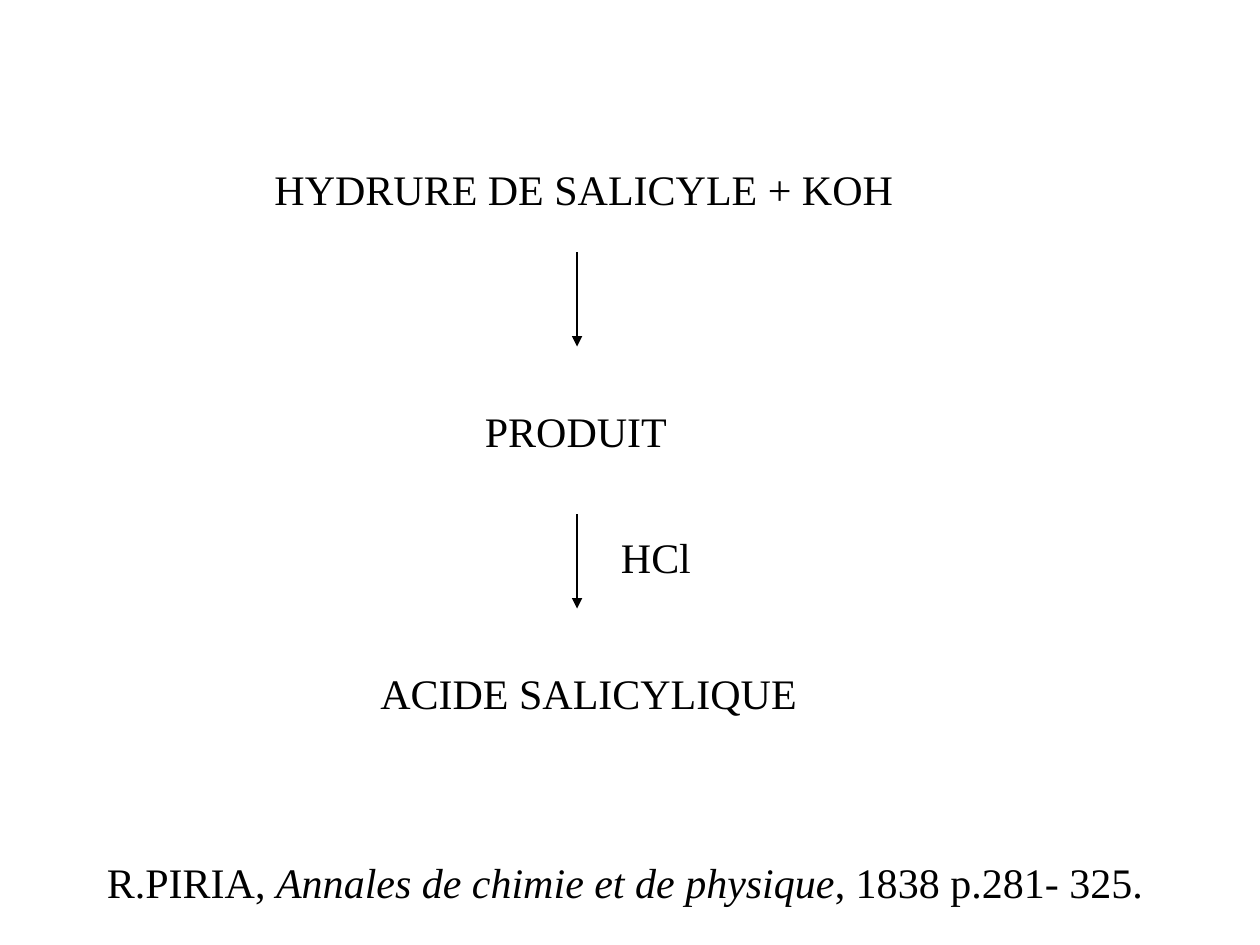
from dataclasses import dataclass

import pptx
import pptx.dml.color
import pptx.enum.shapes
import pptx.enum.text
import pptx.oxml.ns
import pptx.slide
import pptx.util
from lxml import etree
from pptx.util import Inches

BLACK = pptx.dml.color.RGBColor(0, 0, 0)
FONT = "Times New Roman"
FONT_SIZE = pptx.util.Pt(24)
LABEL_HEIGHT = 0.5
ARROW_X = 4.58
ARROW_LENGTH = 0.75
ARROW_TOPS = (2, 4.08)


@dataclass(frozen=True)
class Label:
    left: float
    top: float
    width: float
    texts: tuple[str, ...]
    italic_index: int | None = None


LABELS = (
    Label(2.08, 1.25, 5.11, ("HYDRURE DE SALICYLE + KOH",)),
    Label(3.75, 3.17, 1.65, ("PRODUIT",)),
    Label(4.83, 4.17, 0.76, ("HCl",)),
    Label(2.92, 5.25, 3.51, ("ACIDE SALICYLIQUE",)),
    Label(0.75, 6.75, 8.42,
          ("R.PIRIA, ", "Annales de chimie et de physique", ", 1838 p.281- 325."),
          italic_index=1),
)


def add_label(s: pptx.slide.Slide, label: Label) -> None:
    sp = s.shapes.add_textbox(Inches(label.left), Inches(label.top),
                              Inches(label.width), Inches(LABEL_HEIGHT))
    tf = sp.text_frame
    tf.word_wrap = False
    tf.auto_size = pptx.enum.text.MSO_AUTO_SIZE.SHAPE_TO_FIT_TEXT
    p = tf.paragraphs[0]
    for i, text in enumerate(label.texts):
        r = p.add_run()
        r.text = text
        r.font.name = FONT
        r.font.size = FONT_SIZE
        r.font.color.rgb = BLACK
        r.font.italic = i == label.italic_index


def add_down_arrow(s: pptx.slide.Slide, top: float) -> None:
    cxn = s.shapes.add_connector(
        pptx.enum.shapes.MSO_CONNECTOR.STRAIGHT,
        Inches(ARROW_X), Inches(top), Inches(ARROW_X), Inches(top + ARROW_LENGTH))
    cxn.line.color.rgb = BLACK
    cxn.line.width = pptx.util.Pt(0.75)
    qn = pptx.oxml.ns.qn
    sp_pr = cxn._element.spPr
    etree.SubElement(sp_pr.find(qn("a:ln")), qn("a:tailEnd"), type="triangle")
    etree.SubElement(sp_pr, qn("a:effectLst"))


def main() -> None:
    prs = pptx.Presentation()
    prs.slide_width, prs.slide_height = Inches(10), Inches(7.5)
    s = prs.slides.add_slide(prs.slide_layouts.get_by_name("Blank"))
    for label in LABELS:
        add_label(s, label)
    for top in ARROW_TOPS:
        add_down_arrow(s, top)
    prs.save("out.pptx")


if __name__ == "__main__":
    main()
